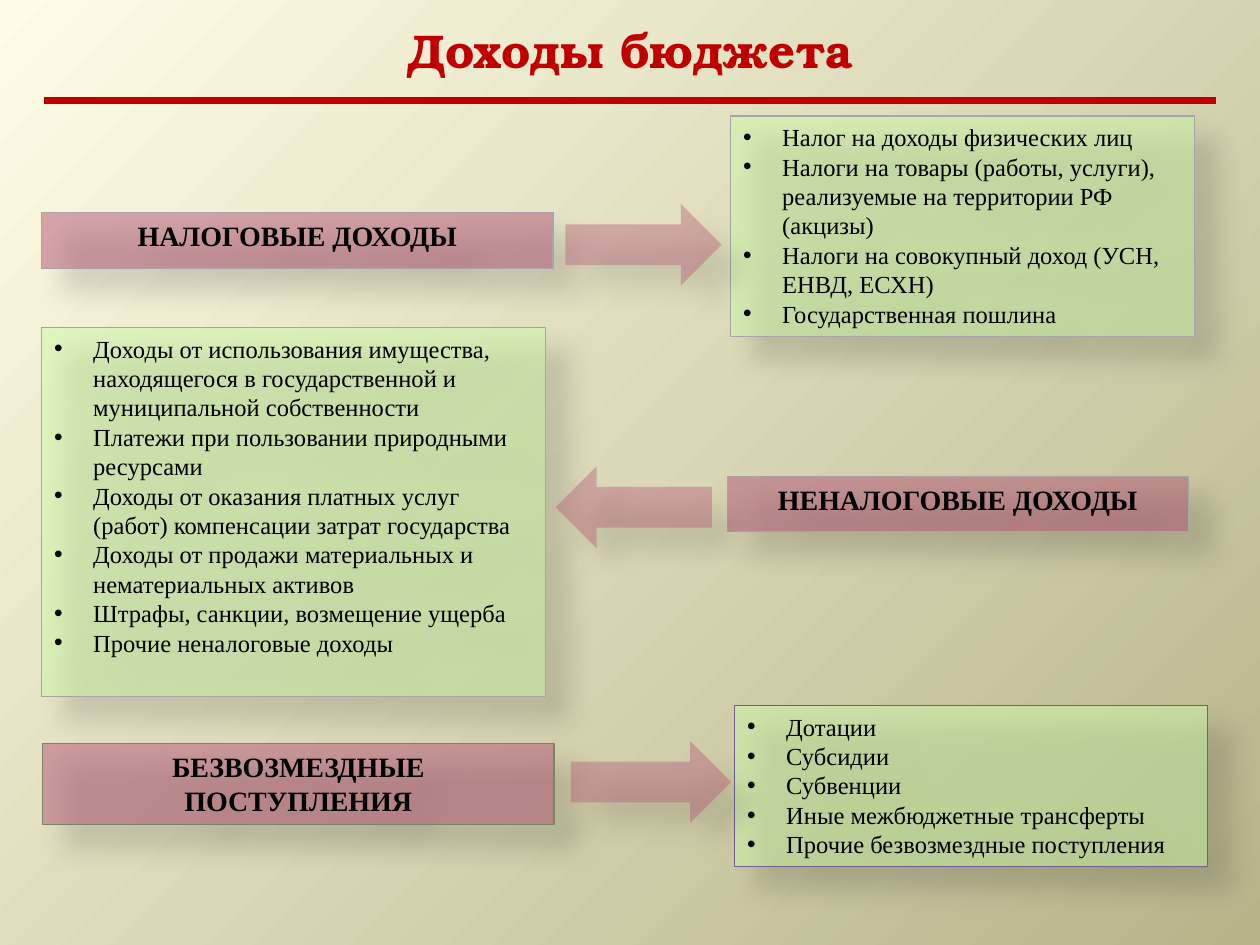
from lxml.etree import SubElement as Sub
from pptx import Presentation
from pptx.dml.color import RGBColor
from pptx.enum.shapes import MSO_CONNECTOR as Link, MSO_SHAPE as Kind
from pptx.enum.text import MSO_ANCHOR as Anchor, MSO_AUTO_SIZE as Fit, PP_ALIGN as Align
from pptx.oxml.ns import qn
from pptx.util import Cm, Pt

FONT = "Times New Roman"
RED, ROSE, GREEN, GREY = "C00000", "B55475", "CBFAA8", "A6A6A6"

TAXES = [
    "Налог на доходы физических лиц",
    "Налоги на товары (работы, услуги), реализуемые на территории РФ (акцизы)",
    "Налоги на совокупный доход (УСН, ЕНВД, ЕСХН)",
    "Государственная пошлина",
]
OTHER = [
    "Доходы от использования имущества, находящегося в государственной и муниципальной собственности",
    "Платежи при пользовании природными ресурсами",
    "Доходы от оказания платных услуг (работ) компенсации затрат государства",
    "Доходы от продажи материальных и нематериальных активов",
    "Штрафы, санкции, возмещение ущерба",
    "Прочие неналоговые доходы",
]
GRANTS = [
    "Дотации",
    "Субсидии",
    "Субвенции",
    "Иные межбюджетные трансферты",
    "Прочие безвозмездные поступления",
]


def color(text):
    return RGBColor.from_string(text)


def add_text(para, text, size, tint="000000", bold=False, font=FONT):
    run = para.add_run()
    run.text = text
    run.font.name, run.font.size, run.font.bold = font, Pt(size), bold
    run.font.color.rgb = color(tint)


def add_shadow(shape):
    shape.shadow.inherit = False
    effects = shape._element.spPr.find(qn("a:effectLst"))
    outer = Sub(effects, qn("a:outerShdw"), blurRad=str(Pt(15)),
                dist=str(Pt(18)), dir="2700000", algn="ctr", rotWithShape="0")
    black = Sub(outer, qn("a:srgbClr"), val="000000")
    Sub(black, qn("a:alpha"), val="26000")


def add_form(slide, kind, place, tint, alpha, edge=None):
    """Add a half-transparent shape with a soft shadow; place is in cm."""
    shape = slide.shapes.add_shape(kind, *map(Cm, place))
    shape.fill.solid()
    shape.fill.fore_color.rgb = color(tint)
    tone = shape._element.spPr.find(qn("a:solidFill"))[0]
    Sub(tone, qn("a:alpha"), val=str(alpha * 1000))
    if edge:
        shape.line.color.rgb = color(edge)
        shape.line.width = Pt(0.75)
    else:
        shape.line.fill.background()
    add_shadow(shape)
    return shape


def add_box(slide, place, tint, edge):
    frame = add_form(slide, Kind.RECTANGLE, place, tint, 50, edge).text_frame
    frame.word_wrap, frame.auto_size = True, Fit.NONE
    frame.vertical_anchor = Anchor.TOP
    return frame


def add_label(slide, place, text, edge=GREY):
    para = add_box(slide, place, ROSE, edge).paragraphs[0]
    para.alignment = Align.CENTER
    add_text(para, text, 16, bold=True)


def add_list(slide, place, items, edge=GREY):
    frame = add_box(slide, place, GREEN, edge)
    for i, item in enumerate(items):
        para = frame.add_paragraph() if i else frame.paragraphs[0]
        para.alignment = Align.LEFT
        props = para._p.get_or_add_pPr()
        props.set("marL", str(Cm(0.79)))
        props.set("indent", str(-Cm(0.79)))
        Sub(props, qn("a:buFont"), typeface="Arial")
        Sub(props, qn("a:buChar"), char="•")
        add_text(para, item, 14)


def add_arrow(slide, left, top, width=3.15, turn=0):
    place = left, top, width, 1.65
    add_form(slide, Kind.RIGHT_ARROW, place, ROSE, 40).rotation = turn


def set_ground(slide):
    """Fill the background with a gradient spreading from the top left corner."""
    fill = slide.background.fill
    fill.gradient()
    for stop, tint in zip(fill.gradient_stops, ("FFFDE6", "B7B48A")):
        stop.color.rgb = color(tint)
    line = slide._element.find(".//" + qn("a:lin"))
    grad = line.getparent()
    grad.remove(line)
    round_ = Sub(grad, qn("a:path"), path="circle")
    Sub(round_, qn("a:fillToRect"), r="100000", b="100000")


def add_title(slide, text):
    title = slide.shapes.title
    title.left, title.top, title.width, title.height = map(Cm, (1.27, 0.41, 22.86, 1.17))
    frame = title.text_frame
    frame.auto_size, frame.vertical_anchor = Fit.NONE, Anchor.MIDDLE
    para = frame.paragraphs[0]
    para.alignment = Align.CENTER
    add_text(para, text, 27, RED, True, "TeX Gyre Bonum")


def add_rule(slide):
    ends = map(Cm, (0.89, 2.03, 24.51, 2.03))
    rule = slide.shapes.add_connector(Link.STRAIGHT, *ends)
    rule.line.color.rgb = color(RED)
    rule.line.width = Pt(3.75)
    Sub(rule._element.spPr, qn("a:effectLst"))


def main():
    deck = Presentation()
    deck.slide_width, deck.slide_height = Cm(25.4), Cm(19.05)
    slide = deck.slides.add_slide(deck.slide_layouts[5])
    set_ground(slide)
    add_title(slide, "Доходы бюджета")
    add_rule(slide)

    add_label(slide, (0.84, 4.29, 10.31, 1.12), "НАЛОГОВЫЕ ДОХОДЫ")
    add_list(slide, (14.73, 2.34, 9.35, 4.45), TAXES)
    add_arrow(slide, 11.4, 4.11)

    add_list(slide, (0.84, 6.6, 10.16, 7.44), OTHER)
    add_label(slide, (14.66, 9.6, 9.3, 1.12), "НЕНАЛОГОВЫЕ ДОХОДЫ")
    add_arrow(slide, 11.2, 9.4, turn=180)

    add_label(slide, (0.86, 14.99, 10.31, 1.63), "БЕЗВОЗМЕЗДНЫЕ ПОСТУПЛЕНИЯ", "788569")
    add_list(slide, (14.81, 14.22, 9.53, 3.25), GRANTS, "715F8E")
    add_arrow(slide, 11.51, 14.94, 3.23)

    deck.save("out.pptx")


if __name__ == "__main__":
    main()
